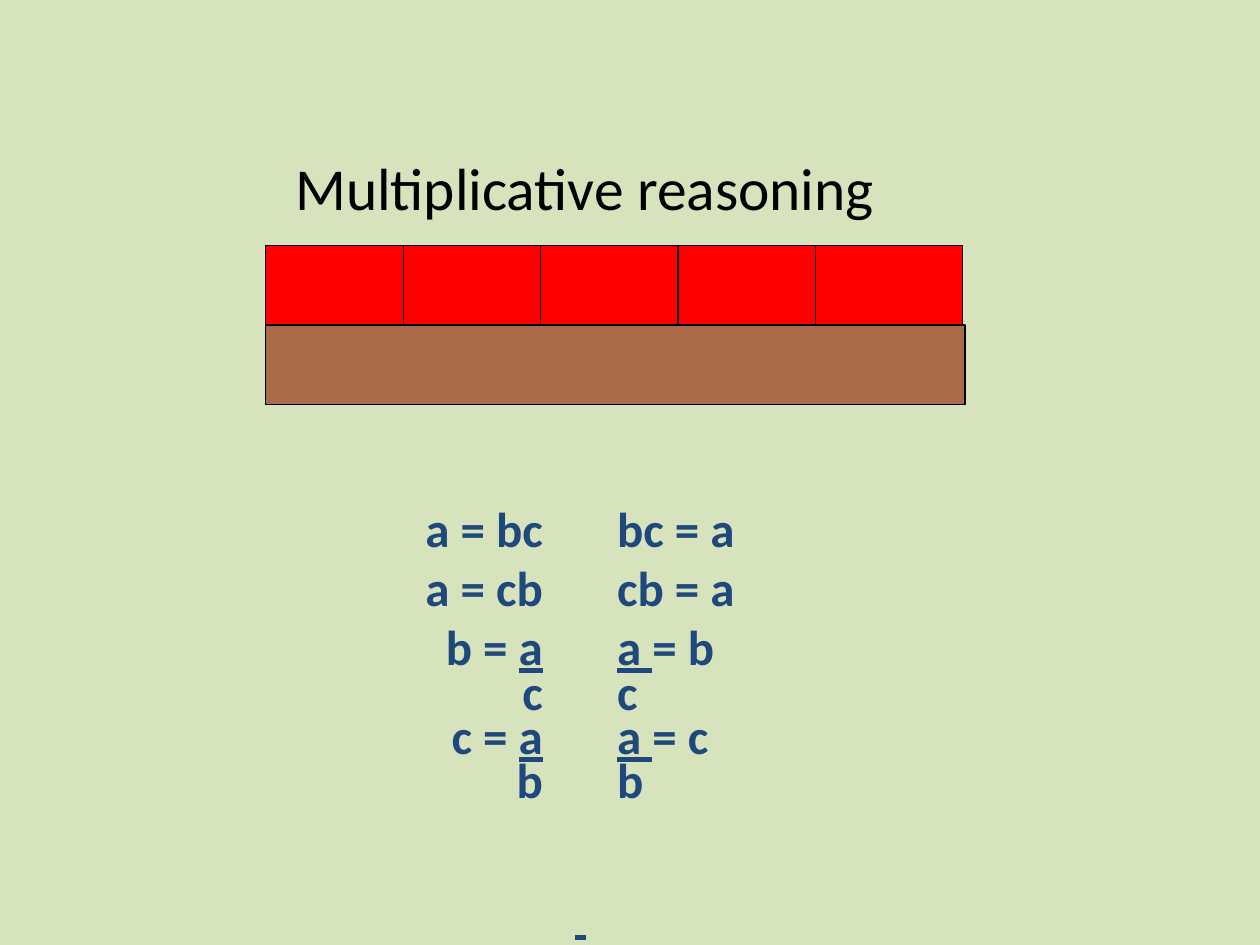
from lxml import etree
from pptx import Presentation
from pptx import util as u
from pptx.dml.color import RGBColor
from pptx.enum import shapes, text
from pptx.oxml import ns


def color(hex_code):
    return RGBColor.from_string(hex_code)


def apply(target, values):
    for name, value in values.items():
        setattr(target, name, value)


class SlideBuilder:
    FONT = "Calibri"
    LINE = "000000"
    FORMULA = {"size": u.Pt(28), "bold": True, "name": FONT}
    TITLE = {"size": u.Pt(34), "bold": False, "name": FONT}

    def __init__(self, deck, background):
        self.slide = deck.slides.add_slide(deck.slide_layouts[5])
        fill = self.slide.background.fill
        fill.solid()
        fill.fore_color.rgb = color(background)

    def place(self, item, box):
        apply(item, dict(zip(("left", "top", "width", "height"), map(u.Inches, box))))

    def title(self, wording, box):
        heading = self.slide.shapes.title
        self.place(heading, box)
        heading.text_frame.text = wording
        heading.text_frame.vertical_anchor = text.MSO_ANCHOR.MIDDLE
        paragraph = heading.text_frame.paragraphs[0]
        paragraph.alignment = text.PP_ALIGN.CENTER
        font = paragraph.runs[0].font
        apply(font, self.TITLE)
        font.color.rgb = color("000000")

    def bar(self, box, fill):
        rod = self.slide.shapes.add_shape(
            shapes.MSO_SHAPE.RECTANGLE, *map(u.Inches, box))
        rod.shadow.inherit = False
        rod.fill.solid()
        rod.fill.fore_color.rgb = color(fill)
        rod.line.color.rgb = color(self.LINE)
        rod.line.width = u.Pt(0.75)

    def tab_stops(self, paragraph, stops):
        properties = paragraph._p.get_or_add_pPr()
        tab_list = etree.SubElement(properties, ns.qn("a:tabLst"))
        for position, side in stops:
            etree.SubElement(tab_list, ns.qn("a:tab"),
                             pos=str(u.Inches(position)), algn=side)

    def formulas(self, lines, box, stops, hex_code):
        frame = self.slide.shapes.add_textbox(*map(u.Inches, box)).text_frame
        frame.word_wrap = True
        for index, (wording, layout) in enumerate(lines):
            paragraph = frame.add_paragraph() if index else frame.paragraphs[0]
            apply(paragraph, layout)
            if "\t" in wording:
                self.tab_stops(paragraph, stops)
            for part, piece in enumerate(wording.split("_")):
                if piece:
                    run = paragraph.add_run()
                    run.text = piece
                    apply(run.font, {**self.FORMULA, "underline": part % 2 == 1})
                    run.font.color.rgb = color(hex_code)


def main():
    deck = Presentation()
    apply(deck, {"slide_width": u.Inches(10), "slide_height": u.Inches(7.5)})
    page = SlideBuilder(deck, "D7E3BC")
    page.title("Multiplicative reasoning", (0.35, 1.07, 8.58, 0.83))

    left, top, height, pitch = 2.11, 1.95, 0.63, 1.09
    page.bar((left, top + height, 5.55, height), "AA6B48")
    for index, width in enumerate([1.12] * 4 + [1.17]):
        page.bar((left + index * pitch, top, width, height), "FF0000")

    column = {"alignment": text.PP_ALIGN.LEFT}
    tight = {**column, "line_spacing": 0.75}
    dash = {"alignment": text.PP_ALIGN.CENTER, "line_spacing": 0.75,
            "space_before": u.Pt(51)}
    page.formulas([
        ("\ta = bc\tbc = a", column),
        ("\ta = cb\tcb = a", column),
        ("\tb = _a_\t_a _= b", column),
        ("\tc\tc", tight),
        ("\tc = _a_\t_a _= c", tight),
        ("\tb\tb", tight),
        ("_ _", dash),
    ], (left, 3.91, 5, 4.7), [(2.1, "r"), (2.69, "l")], "1F497D")

    deck.save("out.pptx")


if __name__ == "__main__":
    main()
